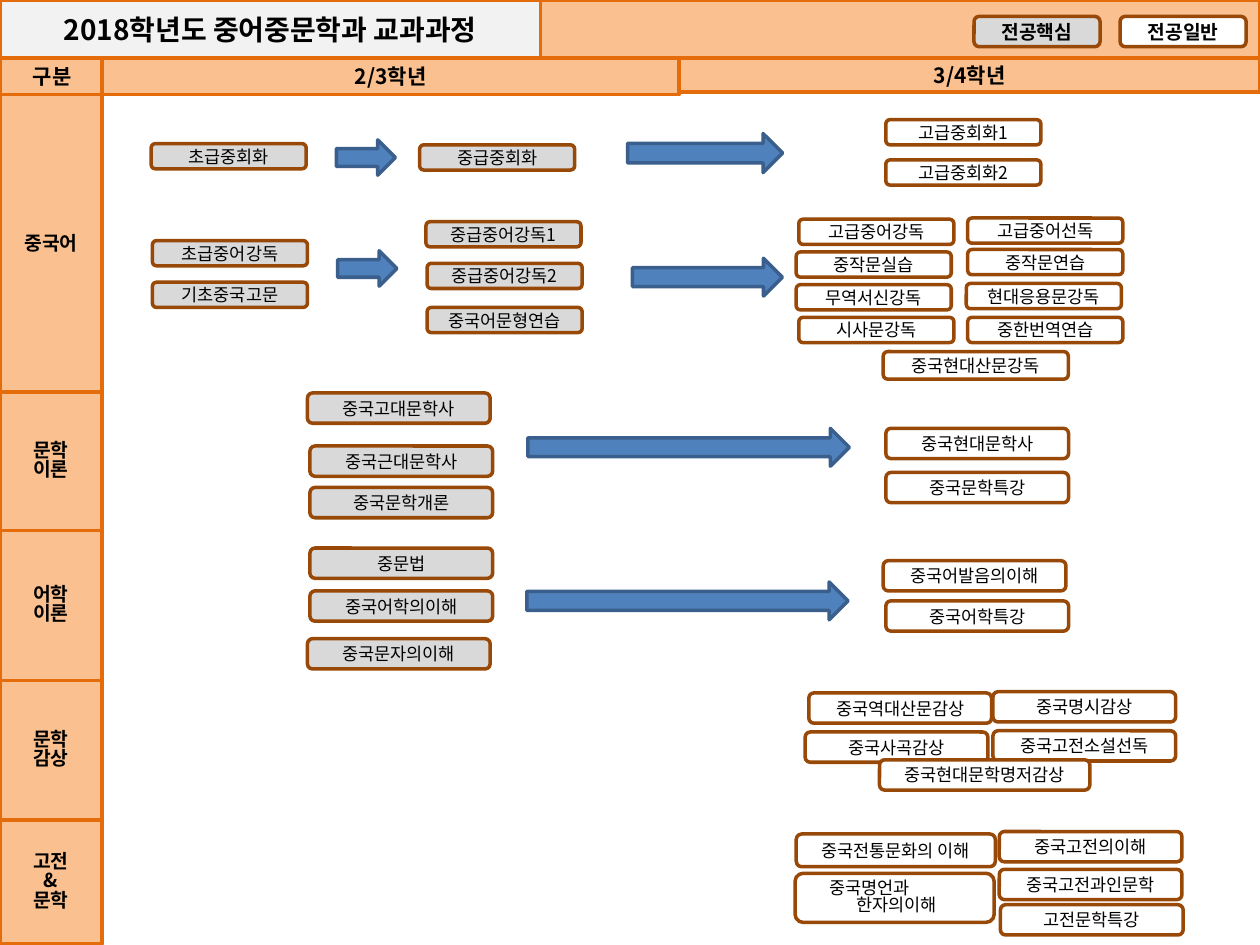
from lxml import etree
from pptx import Presentation
from pptx import util as u
from pptx.dml.color import RGBColor
from pptx.enum import shapes, text
from pptx.oxml.ns import qn

FONT = "Noto Sans CJK KR"
COLORS = {
    "band": "FAC090", "band_line": "E46C0A", "title": "F2F2F2",
    "core": "D9D9D9", "general": "FFFFFF", "course_line": "984807",
    "arrow": "4F81BD", "arrow_line": "3A5F8C", "ink": "000000",
}
KINDS = shapes.MSO_SHAPE
SMALL, LARGE = (88.6, 14.4), (104.4, 17.3)

SECTIONS = ["중국어", "문학\n이론", "어학\n이론", "문학\n감상", "고전\n&\n문학"]
SECTION_EDGES = [54, 224, 303.1, 388.8, 468.7, 539.3]

HEADINGS = [
    ("구분", 0, 59.8, 20.9),
    ("2/3학년", 58.3, 329.8, 20.9),
    ("3/4학년", 388.1, 331.9, 19.4),
]

COURSES = [
    ("core", SMALL, [
        ("초급중회화", 86.4, 82.1), ("초급중어강독", 87.1, 137.5),
        ("기초중국고문", 87.1, 161.3), ("중급중회화", 239.8, 82.8),
        ("중급중어강독1", 243.4, 126.7), ("중급중어강독2", 244.1, 150.5),
        ("중국어문형연습", 244.1, 175.7),
    ]),
    ("general", SMALL, [
        ("고급중회화1", 506.2, 68.4), ("고급중회화2", 506.2, 91.4),
        ("고급중어강독", 456.5, 125.3), ("고급중어선독", 553, 124.6),
        ("중작문실습", 455, 144), ("중작문연습", 553, 142.6),
        ("무역서신강독", 455, 162.7), ("현대응용문강독", 552.2, 162),
        ("시사문강독", 456.5, 181.4), ("중한번역연습", 553, 181.4),
    ]),
    ("general", (105.8, 15.8), [("중국현대산문강독", 504.7, 200.9)]),
    ("core", LARGE, [
        ("중국고대문학사", 175.7, 224.6), ("중국근대문학사", 177.1, 254.9),
        ("중국문학개론", 177.1, 278.6), ("중문법", 177.1, 313.2),
        ("중국어학의이해", 177.1, 337.7), ("중국문자의이해", 175.7, 365),
    ]),
    ("general", LARGE, [
        ("중국현대문학사", 506.2, 244.8), ("중국문학특강", 506.2, 270),
        ("중국어발음의이해", 504.7, 320.4), ("중국어학특강", 506.2, 343.4),
        ("중국역대산문감상", 462.2, 396), ("중국명시감상", 567.4, 395.3),
        ("중국사곡감상", 460.1, 418.3), ("중국고전소설선독", 567.4, 417.6),
        ("중국고전의이해", 571, 475.2), ("중국고전과인문학", 571, 496.8),
        ("고전문학특강", 571.7, 517),
    ]),
    ("general", (120.2, 17.3), [("중국현대문학명저감상", 502.6, 434.2)]),
    (None, (113.8, 18.7), [("중국전통문화의 이해", 455, 476.6)]),
]

ARROWS = [
    (192.2, 79.9, 33.8, 20.2), (193, 143.3, 33.8, 20.2),
    (358.6, 76.3, 88.6, 22.3), (361.4, 147.6, 85.7, 21.6),
    (301.7, 244.8, 183.6, 21.6), (301, 332.6, 183.6, 21.6),
]


def write(box, content, *, size=10, bold=False, hang=None):
    frame = box.text_frame
    frame.word_wrap = True
    frame.auto_size = text.MSO_AUTO_SIZE.NONE
    frame.vertical_anchor = text.MSO_ANCHOR.MIDDLE
    frame.margin_left = frame.margin_right = 0
    frame.margin_top = frame.margin_bottom = 0
    lines = content.split("\n")
    for index, line in enumerate(lines):
        para = frame.add_paragraph() if index else frame.paragraphs[0]
        para.text = line
        para.alignment = text.PP_ALIGN.LEFT if hang else text.PP_ALIGN.CENTER
        if len(lines) > 1 or hang:
            para.line_spacing = 0.84
        for span in para.runs:
            span.font.name = FONT
            span.font.size = u.Pt(size)
            span.font.bold = bold
            span.font.color.rgb = RGBColor.from_string(COLORS["ink"])
    for latin in list(box.element.iter(qn("a:latin"))):
        east_asian = etree.Element(qn("a:ea"), typeface=FONT)
        latin.addnext(east_asian)
    if hang:
        margin, indent = hang
        for settings in box.element.iter(qn("a:pPr")):
            settings.set("marL", str(u.Pt(margin)))
            settings.set("indent", str(u.Pt(indent)))


class Curriculum:
    def __init__(self):
        self.deck = Presentation()
        self.deck.slide_width, self.deck.slide_height = u.Pt(720), u.Pt(540)
        self.page = self.deck.slides.add_slide(self.deck.slide_layouts[5])

    def paint(self, box, fill, line):
        if fill:
            box.fill.solid()
            box.fill.fore_color.rgb = RGBColor.from_string(COLORS[fill])
        else:
            box.fill.background()
        box.line.color.rgb = RGBColor.from_string(COLORS[line])
        box.line.width = u.Pt(2)

    def shape(self, kind, place, fill, line):
        box = self.page.shapes.add_shape(kind, *map(u.Pt, place))
        box.shadow.inherit = False
        self.paint(box, fill, line)
        return box

    def band(self, place, content="", size=11):
        box = self.shape(KINDS.RECTANGLE, place, "band", "band_line")
        if content:
            write(box, content, size=size, bold=True)

    def title(self, content, place):
        box = self.page.shapes.title
        box.left, box.top, box.width, box.height = map(u.Pt, place)
        outline = etree.SubElement(box.element.spPr, qn("a:prstGeom"), prst="roundRect")
        etree.SubElement(outline, qn("a:avLst"))
        self.paint(box, "title", "band_line")
        write(box, content, size=16, bold=True)
        box.element.getparent().append(box.element)

    def course(self, content, place, fill, **style):
        box = self.shape(KINDS.ROUNDED_RECTANGLE, place, fill, "course_line")
        write(box, content, **style)

    def arrow(self, place):
        self.shape(KINDS.RIGHT_ARROW, place, "arrow", "arrow_line")


def main():
    chart = Curriculum()
    chart.band((0, 0, 720, 33.8))
    chart.title("2018학년도 중어중문학과 교과과정", (0, 0, 308.9, 33.8))
    for name, top, bottom in zip(SECTIONS, SECTION_EDGES, SECTION_EDGES[1:]):
        chart.band((0, top, 58.3, bottom - top), name)
    for name, left, width, height in HEADINGS:
        chart.band((left, 33.1, width, height), name, 12)
    for name, left, fill in [("전공핵심", 556.6, "core"), ("전공일반", 640.1, "general")]:
        chart.course(name, (left, 9.4, 72, 17.3), fill, size=11, bold=True)
    for fill, size, entries in COURSES:
        for name, left, top in entries:
            chart.course(name, (left, top, *size), fill)
    chart.course("중국명언과\v한자의이해", (454.3, 499, 113.8, 28.1), None, hang=(33.7, -15.4))
    for place in ARROWS:
        chart.arrow(place)
    chart.deck.save("out.pptx")


if __name__ == "__main__":
    main()
